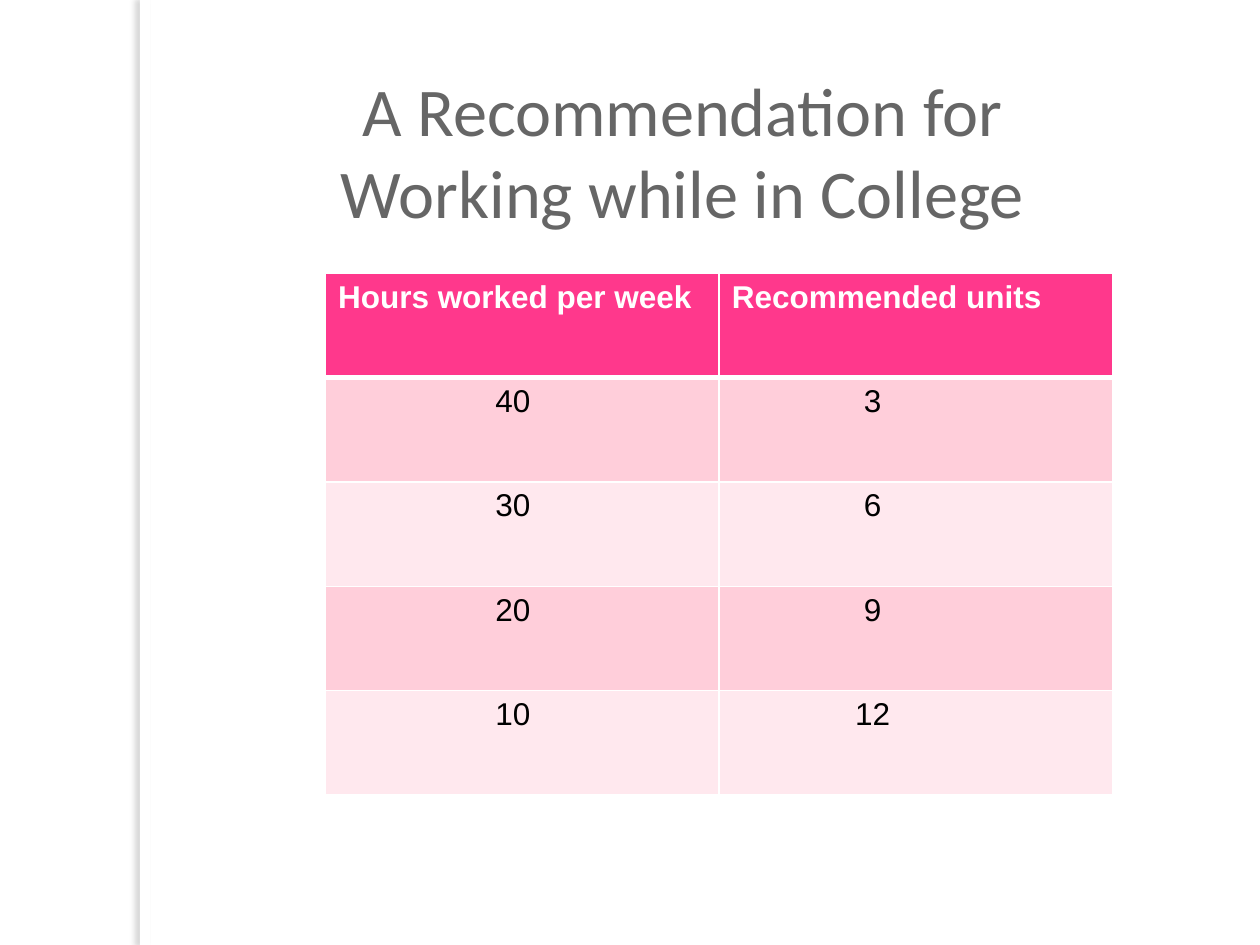
from lxml.etree import SubElement
from pptx import Presentation
from pptx.dml.color import RGBColor
from pptx.enum.shapes import MSO_SHAPE as Shape
from pptx.enum.text import MSO_ANCHOR as Anchor, MSO_AUTO_SIZE as AutoSize, PP_ALIGN as Align
from pptx.oxml import parse_xml
from pptx.oxml.ns import nsdecls, qn
from pptx.util import Pt

COLORS = {
    "white": "FFFFFF",
    "black": "000000",
    "title": "666666",
    "header": "FF388C",
    "band_dark": "FFCEDA",
    "band_light": "FFE8EE",
    "shadow": "686868",
}
ROWS = [
    ("Hours worked per week", "Recommended units"),
    ("40", "3"),
    ("30", "6"),
    ("20", "9"),
    ("10", "12"),
]
# Right cell margins set the centre line of the numbers in each column.
NUMBER_MARGINS = (18, 57)


def rgb(name):
    return RGBColor.from_string(COLORS[name])


class SlideBuilder:
    def __init__(self, prs):
        self.s = prs.slides.add_slide(prs.slide_layouts[5])

    def style(self, p, font, size, color, bold=False):
        p.font.name, p.font.size, p.font.bold = font, Pt(size), bold
        p.font.color.rgb = rgb(color)

    def side_strip(self, x, y, w, h):
        """Draw a white strip that casts a soft shadow to its left."""
        sp = self.s.shapes.add_shape(Shape.RECTANGLE, Pt(x), Pt(y), Pt(w), Pt(h))
        sp.fill.solid()
        sp.fill.fore_color.rgb = rgb("white")
        sp.line.fill.background()
        sp.shadow.inherit = False
        effects = sp._element.spPr.find(qn("a:effectLst"))
        effects.append(parse_xml(
            f'<a:outerShdw {nsdecls("a")} blurRad="{Pt(3)}" dist="{Pt(3)}" dir="10800000">'
            f'<a:srgbClr val="{COLORS["shadow"]}"><a:alpha val="25000"/></a:srgbClr>'
            '</a:outerShdw>'))

    def title(self, lines, x, y, w, h):
        sp = self.s.shapes.title
        sp.left, sp.top, sp.width, sp.height = Pt(x), Pt(y), Pt(w), Pt(h)
        tf = sp.text_frame
        tf.text = "\n".join(lines)
        tf.auto_size = AutoSize.NONE
        tf.word_wrap = False
        tf.vertical_anchor = Anchor.MIDDLE
        for p in tf.paragraphs:
            p.alignment = Align.CENTER
            self.style(p, "Calibri", 39, "title")

    def borders(self, cell, bottom):
        tc_pr = cell._tc.get_or_add_tcPr()
        for side, width in (("L", 1), ("R", 1), ("T", 1), ("B", bottom)):
            ln = SubElement(tc_pr, qn(f"a:ln{side}"), w=str(Pt(width)))
            fill = SubElement(ln, qn("a:solidFill"))
            SubElement(fill, qn("a:srgbClr"), val=COLORS["white"])

    def table(self, rows, x, y, w, row_h):
        table = self.s.shapes.add_table(
            len(rows), len(rows[0]), Pt(x), Pt(y), Pt(w), Pt(row_h * len(rows))).table
        for i, row in enumerate(rows):
            header = i == 0
            band = "band_dark" if i % 2 else "band_light"
            for j, text in enumerate(row):
                cell = table.cell(i, j)
                cell.text = text
                # Borders come before the fill in the cell properties.
                self.borders(cell, bottom=3 if header else 1)
                cell.fill.solid()
                cell.fill.fore_color.rgb = rgb("header" if header else band)
                p = cell.text_frame.paragraphs[0]
                self.style(p, "Arial", 18, "white" if header else "black", bold=header)
                if not header:
                    p.alignment = Align.CENTER
                    cell.margin_right = Pt(NUMBER_MARGINS[j])


def main():
    prs = Presentation()
    prs.slide_width, prs.slide_height = Pt(720), Pt(540)
    slide = SlideBuilder(prs)
    slide.side_strip(80, 0, 6, 540)
    slide.table(ROWS, 186, 156.25, 450, 59.6)
    slide.title(["A Recommendation for", "Working while in College"], 180, 35.25, 420, 101.5)
    prs.save("out.pptx")


if __name__ == "__main__":
    main()
